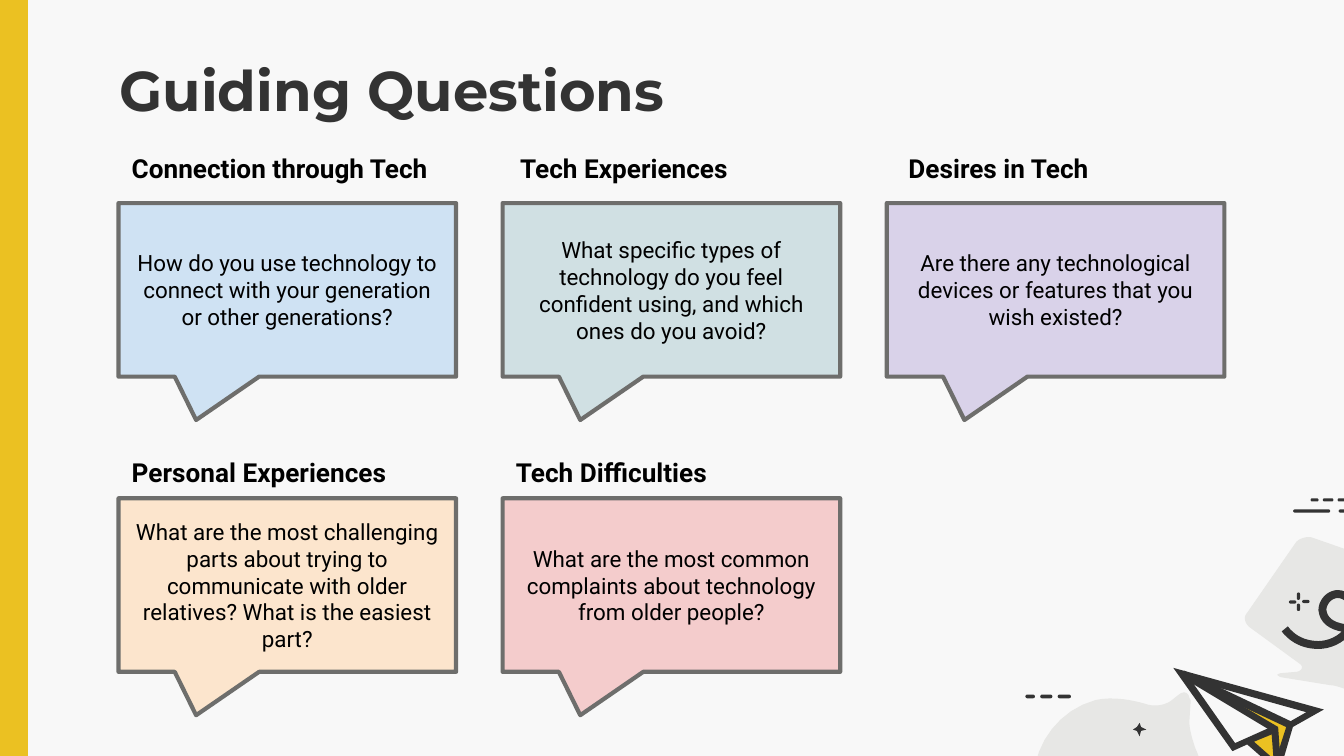
"""Build the Guiding Questions slide with five callouts and a paper plane corner."""
from lxml.etree import SubElement
from pptx import Presentation
from pptx.dml.color import RGBColor
from pptx.enum.shapes import MSO_SHAPE
from pptx.enum.text import MSO_ANCHOR, PP_ALIGN
from pptx.util import Cm, Pt

COLORS = {
    "background": "F8F8F8", "yellow": "EBC122", "dark": "333333",
    "pale": "E7E7E5", "border": "6E6E6C", "black": "000000",
    "blue": "CFE2F3", "teal": "D0E0E3", "purple": "D9D2E9",
    "orange": "FCE5CD", "red": "F4CCCC",
}

TITLE = "Guiding Questions"
ROWS = [
    {"heading_top": 2.64, "callout_top": 3.84, "heading_pitch": 7.34, "topics": [
        ("Connection through Tech", "blue",
         "How do you use technology to connect with your generation or other generations?"),
        ("Tech Experiences", "teal",
         "What specific types of technology do you feel confident using, and which ones do you avoid?"),
        ("Desires in Tech", "purple",
         "Are there any technological devices or features that you wish existed?"),
    ]},
    {"heading_top": 8.38, "callout_top": 9.42, "heading_pitch": 7.26, "topics": [
        ("Personal Experiences", "orange",
         "What are the most challenging parts about trying to communicate with older relatives? "
         "What is the easiest part?"),
        ("Tech Difficulties", "red",
         "What are the most common complaints about technology from older people?"),
    ]},
]
LEFT, PITCH, WIDTH, HEIGHT, HEADING_HEIGHT = 2.24, 7.26, 6.38, 3.28, 1.12

DASHES = [
    (24.51, 11.41, 0.06, 0.14), (24.36, 11.35, 0.14, 0.06),
    (24.51, 11.2, 0.06, 0.14), (24.61, 11.34, 0.14, 0.06),
    (24.44, 9.63, 0.7, 0.06), (25.3, 9.63, 0.17, 0.06),
    (24.77, 9.42, 0.15, 0.06), (25, 9.42, 0.2, 0.06), (25.28, 9.42, 0.2, 0.06),
    (19.38, 13.13, 0.18, 0.07), (19.66, 13.13, 0.23, 0.07), (19.99, 13.13, 0.25, 0.07),
]

PATH_UNIT = Cm(0.0254)
BUBBLES = [
    [(1024, 417), (1023, 416, 1021, 416, 1019, 415), (976, 400),
     (972, 399, 966, 401, 964, 404), (928, 456), (925, 459, 926, 464, 930, 467),
     (967, 494), (970, 496, 969, 499, 965, 500), (953, 501),
     (950, 502, 950, 502, 951, 503), (953, 504), (990, 510),
     (994, 510, 1001, 513, 1005, 514), (1023, 523),
     (1027, 525, 1031, 524, 1033, 520), (1061, 466),
     (1063, 462, 1062, 456, 1059, 453), (1032, 423), (1029, 421, 1027, 419, 1024, 417)],
    [(771, 599), (779, 632, 814, 652, 848, 643), (881, 635, 902, 600, 893, 566),
     (891, 560, 890, 558, 890, 558), (889, 556, 888, 552, 887, 549),
     (886, 545, 885, 541, 885, 537), (886, 522), (886, 520, 885, 520, 885, 519),
     (884, 515, 881, 514, 877, 517), (872, 521), (867, 525, 859, 526, 853, 524),
     (853, 524, 832, 517, 815, 521), (782, 530, 762, 565, 771, 599)],
]
STAR = [(848, 538), (846, 541), (843, 543), (846, 544),
        (848, 548), (849, 544), (853, 543), (849, 541)]
PLANE = [
    ("background", [[(977, 529), (879, 501), (917, 555), (928, 552), (949, 569), (960, 540)]]),
    ("yellow", [[(921, 522), (918, 525), (949, 542), (929, 551), (936, 559),
                 (946, 566), (951, 565), (956, 553), (960, 540)]]),
    ("dark", [[(881, 499), (878, 504), (959, 542), (961, 537)]]),
    ("dark", [[(972, 530), (958, 538), (949, 566), (933, 552), (950, 545),
               (948, 540), (919, 553), (886, 506)],
              [(985, 528), (873, 497), (917, 559), (928, 554), (952, 575), (962, 541)]]),
    ("dark", [[(883, 501), (881, 505), (946, 544), (948, 570), (953, 569), (951, 541)]]),
]
SWIRL = [(956, 468), (962, 476, 971, 480, 981, 480), (991, 480, 1002, 474, 1006, 464),
         (1009, 453, 1005, 442, 995, 442), (987, 443, 984, 450, 984, 454),
         (985, 463, 993, 468, 1009, 468), (1020, 468, 1028, 456, 1032, 449)]


def color(name):
    return RGBColor.from_string(COLORS[name])


def paint(shape, fill=None, line=None, width=0):
    shape.shadow.inherit = False
    if fill:
        shape.fill.solid()
        shape.fill.fore_color.rgb = color(fill)
    else:
        shape.fill.background()
    if line:
        shape.line.color.rgb = color(line)
        shape.line.width = Pt(width)
    else:
        shape.line.fill.background()


def add_preset(slide, kind, box, *style):
    shape = slide.shapes.add_shape(kind, *map(Cm, box))
    paint(shape, *style)
    return shape


def write(shape, text, font_name, size, font_color="black", bold=False):
    frame = shape.text_frame
    frame.word_wrap = True
    frame.margin_left = frame.margin_right = Cm(0.25)
    frame.margin_top = frame.margin_bottom = Cm(0.25)
    paragraph = frame.paragraphs[0]
    paragraph.text = text
    font = paragraph.font
    font.name, font.size, font.bold = font_name, Pt(size), bold
    font.color.rgb = color(font_color)
    return paragraph


def add_label(slide, box, *style):
    write(slide.shapes.add_textbox(*map(Cm, box)), *style)


def flatten(outline, steps=10):
    points = [outline[0]]
    for segment in outline[1:]:
        if len(segment) == 2:
            points.append(segment)
            continue
        start, first, second, end = points[-1], segment[:2], segment[2:4], segment[4:]
        for step in range(1, steps + 1):
            t = step / steps
            points.append(tuple(
                (1 - t) ** 3 * a + 3 * t * (1 - t) ** 2 * b + 3 * t * t * (1 - t) * c + t ** 3 * d
                for a, b, c, d in zip(start, first, second, end)))
    return [(x * PATH_UNIT, y * PATH_UNIT) for x, y in points]


def add_outline(slide, outlines, *style, close=True):
    contours = [flatten(outline) for outline in outlines]
    builder = slide.shapes.build_freeform(*contours[0][0])
    for index, points in enumerate(contours):
        if index:
            builder.move_to(*points[0])
        builder.add_line_segments(points[1:], close=close)
    shape = builder.convert_to_shape()
    paint(shape, *style)
    return shape


def add_decoration(slide):
    add_preset(slide, MSO_SHAPE.RECTANGLE, (-0.02, 0, 0.54, 14.29), "yellow", "yellow", 0.75)
    for bubble in BUBBLES:
        add_outline(slide, [bubble], "pale")
    for dash in DASHES:
        add_preset(slide, MSO_SHAPE.ROUNDED_RECTANGLE, dash, "dark").adjustments[0] = 0.5
    add_outline(slide, [STAR], "dark")
    for fill, outlines in PLANE:
        add_outline(slide, outlines, fill)
    add_outline(slide, [SWIRL], None, "dark", 4.25, close=False)


def add_topics(slide):
    for row in ROWS:
        for column, (heading, fill, question) in enumerate(row["topics"]):
            box = (LEFT + column * PITCH, row["callout_top"], WIDTH, HEIGHT)
            callout = add_preset(slide, MSO_SHAPE.ROUNDED_RECTANGULAR_CALLOUT, box,
                                 fill, "border", 2.25)
            for index, value in enumerate((-0.27, 0.75, 0)):
                callout.adjustments[index] = value
            line = callout.line._get_or_add_ln()
            SubElement(line, line.tag.replace("}ln", "}round"))
            write(callout, question, "Roboto", 12).alignment = PP_ALIGN.CENTER
            callout.text_frame.vertical_anchor = MSO_ANCHOR.MIDDLE
            heading_box = (LEFT + column * row["heading_pitch"], row["heading_top"],
                           WIDTH, HEADING_HEIGHT)
            add_label(slide, heading_box, heading, "Roboto", 14, "black", True)


def main():
    presentation = Presentation()
    presentation.slide_width, presentation.slide_height = Cm(25.4), Cm(14.29)
    slide = presentation.slides.add_slide(presentation.slide_layouts[6])
    slide.background.fill.solid()
    slide.background.fill.fore_color.rgb = color("background")
    add_decoration(slide)
    add_label(slide, (2.01, 0.81, 21.41, 1.6), TITLE, "Montserrat", 30, "dark", True)
    add_topics(slide)
    presentation.save("out.pptx")


if __name__ == "__main__":
    main()
